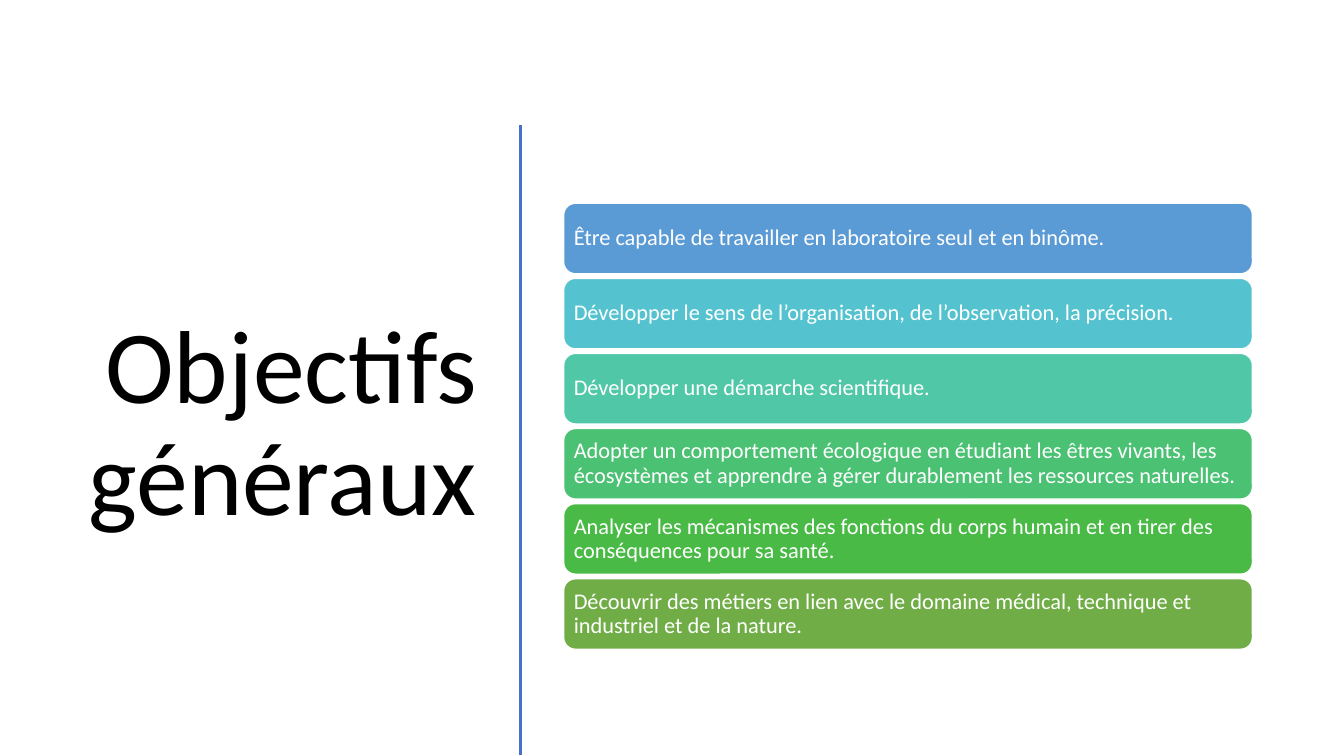
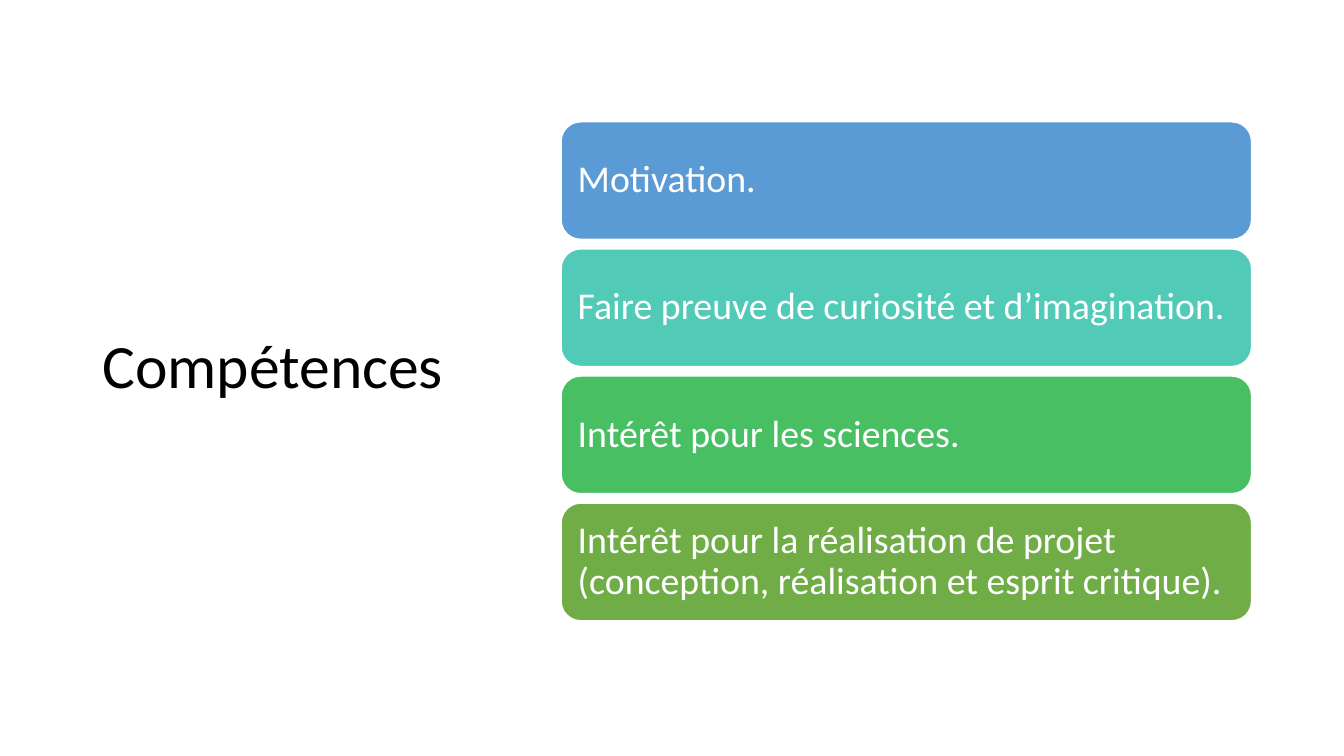
from dataclasses import dataclass

import lxml.etree
import pptx
import pptx.dml.color
import pptx.enum.shapes
import pptx.enum.text
import pptx.oxml.ns
import pptx.slide
import pptx.text.text
import pptx.util

EMU_PER_PX = 7620  # 120 px to the inch
SLIDE_W, SLIDE_H = 1600, 900

ALIGN = pptx.enum.text.PP_ALIGN


@dataclass(frozen=True)
class Theme:
    font: str = "Calibri"
    title_color: str = "000000"
    card_text: str = "FFFFFF"
    card_border: str = "FFFFFF"
    divider: str = "4472C4"
    border_pt: int = 1
    divider_pt: int = 2
    line_spacing: float = 0.9
    big_title_pt: int = 74
    title_pt: int = 44
    small_card_pt: int = 16
    large_card_pt: int = 27


THEME = Theme()


@dataclass(frozen=True)
class Box:
    left: int
    top: int
    width: int
    height: int


@dataclass(frozen=True)
class Title:
    text: str
    box: Box
    size: int
    align: ALIGN = ALIGN.LEFT


@dataclass(frozen=True)
class Card:
    text: str
    fill: str


@dataclass(frozen=True)
class CardStack:
    box: Box
    card_height: int
    inset: int
    size: int
    cards: tuple[Card, ...]


@dataclass(frozen=True)
class Divider:
    x: int
    top: int
    bottom: int


OBJECTIVES_TITLE = Title("Objectifs généraux", Box(62, 140, 518, 734),
                         THEME.big_title_pt, ALIGN.RIGHT)
OBJECTIVES_DIVIDER = Divider(620, 149, 899)
OBJECTIVES = CardStack(Box(671, 242, 820, 531), 84, 8, THEME.small_card_pt, (
    Card("Être capable de travailler en laboratoire seul et en binôme.", "5B9BD5"),
    Card("Développer le sens de l’organisation, de l’observation, la précision.", "55C3CF"),
    Card("Développer une démarche scientifique.", "50C8A7"),
    Card("Adopter un comportement écologique en étudiant les êtres vivants, les "
         "écosystèmes et apprendre à gérer durablement les ressources naturelles.", "4BC174"),
    Card("Analyser les mécanismes des fonctions du corps humain et en tirer des "
         "conséquences pour sa santé.", "4ABA46"),
    Card("Découvrir des métiers en lien avec le domaine médical, technique et "
         "industriel et de la nature.", "70AD47"),
))

SKILLS_TITLE = Title("Compétences", Box(110, 73, 443, 731), THEME.title_pt)
SKILLS = CardStack(Box(668, 145, 822, 594), 140, 13, THEME.large_card_pt, (
    Card("Motivation.", "5B9BD5"),
    Card("Faire preuve de curiosité et d’imagination.", "52CAB8"),
    Card("Intérêt pour les sciences.", "49BF64"),
    Card("Intérêt pour la réalisation de projet (conception, réalisation et "
         "esprit critique).", "70AD47"),
))


def px(length: float) -> pptx.util.Emu:
    return pptx.util.Emu(round(length * EMU_PER_PX))


def rgb(color: str) -> pptx.dml.color.RGBColor:
    return pptx.dml.color.RGBColor.from_string(color)


def write_text(tf: pptx.text.text.TextFrame, text: str, size: int, color: str,
               align: ALIGN = ALIGN.LEFT) -> None:
    tf.word_wrap = True
    tf.vertical_anchor = pptx.enum.text.MSO_ANCHOR.MIDDLE
    p = tf.paragraphs[0]
    p.text = text
    p.alignment = align
    p.line_spacing = THEME.line_spacing
    p.font.name = THEME.font
    p.font.size = pptx.util.Pt(size)
    p.font.color.rgb = rgb(color)


def add_title(s: pptx.slide.Slide, title: Title) -> None:
    b = title.box
    sp = s.shapes.add_textbox(px(b.left), px(b.top), px(b.width), px(b.height))
    write_text(sp.text_frame, title.text, title.size, THEME.title_color, title.align)


def add_divider(s: pptx.slide.Slide, divider: Divider) -> None:
    line = s.shapes.add_connector(
        pptx.enum.shapes.MSO_CONNECTOR.STRAIGHT,
        px(divider.x), px(divider.top), px(divider.x), px(divider.bottom))
    line.line.color.rgb = rgb(THEME.divider)
    line.line.width = pptx.util.Pt(THEME.divider_pt)
    lxml.etree.SubElement(line.element.spPr, pptx.oxml.ns.qn("a:effectLst"))


def add_card_stack(s: pptx.slide.Slide, stack: CardStack) -> None:
    """Spread the cards evenly from the top to the bottom of the stack's box."""
    b = stack.box
    pitch = (b.height - stack.card_height) / (len(stack.cards) - 1)
    for i, card in enumerate(stack.cards):
        sp = s.shapes.add_shape(
            pptx.enum.shapes.MSO_SHAPE.ROUNDED_RECTANGLE,
            px(b.left), px(b.top + i * pitch), px(b.width), px(stack.card_height))
        sp.shadow.inherit = False
        sp.fill.solid()
        sp.fill.fore_color.rgb = rgb(card.fill)
        sp.line.color.rgb = rgb(THEME.card_border)
        sp.line.width = pptx.util.Pt(THEME.border_pt)
        tf = sp.text_frame
        tf.margin_left = tf.margin_right = px(stack.inset)
        tf.margin_top = tf.margin_bottom = px(stack.inset)
        write_text(tf, card.text, stack.size, THEME.card_text)


def add_slide(prs, title: Title, stack: CardStack,
              divider: Divider | None = None) -> None:
    s = prs.slides.add_slide(prs.slide_layouts[6])
    add_title(s, title)
    if divider:
        add_divider(s, divider)
    add_card_stack(s, stack)


def main() -> None:
    prs = pptx.Presentation()
    prs.slide_width, prs.slide_height = px(SLIDE_W), px(SLIDE_H)
    add_slide(prs, OBJECTIVES_TITLE, OBJECTIVES, OBJECTIVES_DIVIDER)
    add_slide(prs, SKILLS_TITLE, SKILLS)
    prs.save("out.pptx")


if __name__ == "__main__":
    main()
